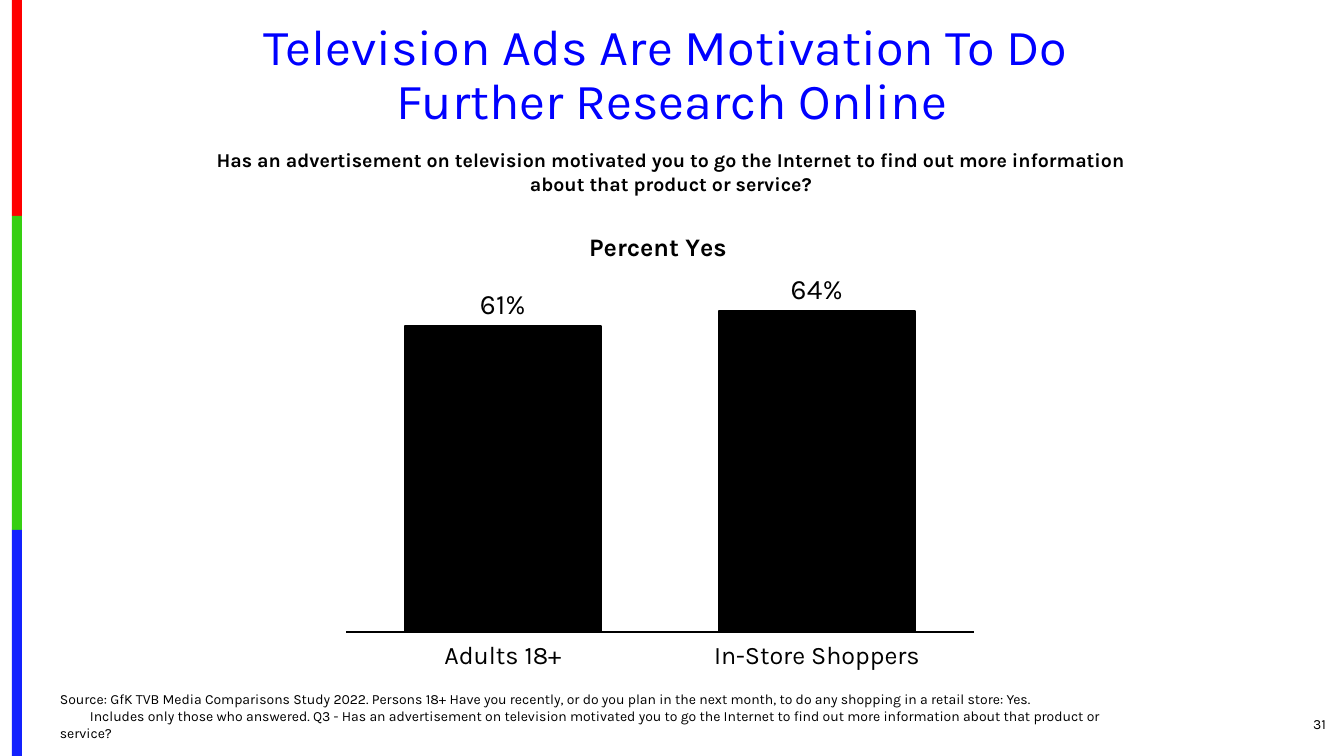
from lxml.etree import SubElement
from pptx import Presentation
from pptx.chart.data import CategoryChartData
from pptx.dml.color import RGBColor
from pptx.enum.chart import XL_CHART_TYPE, XL_LABEL_POSITION, XL_TICK_LABEL_POSITION, XL_TICK_MARK
from pptx.enum.shapes import MSO_SHAPE
from pptx.enum.text import MSO_ANCHOR, PP_ALIGN
from pptx.oxml.ns import qn
from pptx.util import Pt

EMU_PER_PX = 914400 / 100.8


def px(length):
    """Turn whole pixels into EMU."""
    return round(length * EMU_PER_PX)


def color(value):
    """Turn a hex string into a colour."""
    return RGBColor.from_string(value)


def set_layout(part, position, **places):
    """Place a chart part by fractions of the chart area."""
    layout = part.find(qn("c:layout"))
    if layout is None:
        layout = SubElement(part, qn("c:layout"))
        part.insert(position, layout)
    manual = SubElement(layout, qn("c:manualLayout"))
    for name, value in places.items():
        SubElement(manual, qn(f"c:{name}")).set("val", str(value))


class SlideBuilder:
    """Hold the style and the current slide."""

    font_name = "Karla"
    ink = "000000"

    def __init__(self, presentation):
        """Add a blank slide to the presentation."""
        self.slide = presentation.slides.add_slide(presentation.slide_layouts[6])

    def style(self, font, size, bold=False, ink=None):
        """Apply the slide's typeface to a font."""
        font.name = self.font_name
        font.size = Pt(size)
        font.bold = bold
        font.color.rgb = color(ink or self.ink)

    def outline(self, line):
        """Draw a line in the slide's ink."""
        line.color.rgb = color(self.ink)
        line.width = Pt(1.5)

    def band(self, left, top, width, height, fill):
        """Add a plain coloured rectangle."""
        band = self.slide.shapes.add_shape(MSO_SHAPE.RECTANGLE, px(left), px(top), px(width), px(height))
        band.shadow.inherit = False
        band.fill.solid()
        band.fill.fore_color.rgb = color(fill)
        band.line.fill.background()

    def text(self, box, lines, size, align=PP_ALIGN.LEFT, anchor=MSO_ANCHOR.TOP,
             bold=False, ink=None, spacing=None, last_indent=0):
        """Add a wrapped text box with one paragraph per line."""
        frame = self.slide.shapes.add_textbox(*map(px, box)).text_frame
        frame.word_wrap = True
        frame.vertical_anchor = anchor
        frame.text = "\n".join(lines)
        for paragraph in frame.paragraphs:
            paragraph.alignment = align
            paragraph.line_spacing = spacing
            for run in paragraph.runs:
                self.style(run.font, size, bold, ink)
        if last_indent:
            frame.paragraphs[-1]._p.get_or_add_pPr().set("indent", str(px(last_indent)))

    def column_chart(self, box, heading, shares):
        """Add a column chart of shares with a heading."""
        data = CategoryChartData(number_format="0%")
        data.categories = list(shares)
        data.add_series("Series 1", list(shares.values()))
        chart = self.slide.shapes.add_chart(XL_CHART_TYPE.COLUMN_CLUSTERED, *map(px, box), data).chart
        self.style(chart.font, 10)
        chart.has_legend = False

        chart.has_title = True
        title = chart.chart_title
        title.text_frame.text = heading
        self.style(title.text_frame.paragraphs[0].runs[0].font, 18, bold=True)
        set_layout(title._element, 1, xMode="edge", yMode="edge", x=0.38, y=0.04)
        set_layout(chart._chartSpace.chart.plotArea, 0, layoutTarget="inner",
                   xMode="edge", yMode="edge", x=0, y=0.15, w=1, h=0.69)

        categories = chart.category_axis
        categories.major_tick_mark = XL_TICK_MARK.NONE
        categories.tick_label_position = XL_TICK_LABEL_POSITION.LOW
        self.style(categories.tick_labels.font, 18)
        self.outline(categories.format.line)
        percent = chart.value_axis
        percent.minimum_scale = 0
        percent.maximum_scale = 0.7
        percent.has_major_gridlines = False
        percent.visible = False

        plot = chart.plots[0]
        plot.gap_width = 60
        plot.vary_by_categories = False
        columns = plot.series[0]
        columns.format.fill.solid()
        columns.format.fill.fore_color.rgb = color(self.ink)
        self.outline(columns.format.line)
        labels = columns.data_labels
        labels.show_value = True
        labels.number_format = "0%"
        labels.number_format_is_linked = False
        labels.position = XL_LABEL_POSITION.OUTSIDE_END
        self.style(labels.font, 20)


def main():
    """Build and save the slide."""
    presentation = Presentation()
    presentation.slide_width = px(1344)
    presentation.slide_height = px(756)
    builder = SlideBuilder(presentation)

    for top, bottom, fill in ((0, 216, "FE0000"), (216, 530, "36CF12"), (530, 756, "1322FE")):
        builder.band(12, top, 10, bottom - top, fill)

    builder.text((46, 17, 1252, 120),
                 ["Television Ads Are Motivation To Do \vFurther Research Online"],
                 36, PP_ALIGN.CENTER, ink="0000FF", spacing=0.9)
    builder.text((1227, 704, 109, 40), ["31"], 10, PP_ALIGN.RIGHT, MSO_ANCHOR.MIDDLE)
    builder.text((50, 702, 1088, 44),
                 ["Source: GfK TVB Media Comparisons Study 2022. Persons 18+ Have you recently, or do you plan "
                  "in the next month, to do any shopping in a retail store: Yes.",
                  "Includes only those who answered. Q3 - Has an advertisement on television motivated you to go "
                  "the Internet to find out more information about that product or service?"],
                 10, anchor=MSO_ANCHOR.BOTTOM, last_indent=30)
    builder.text((188, 143, 966, 57),
                 ["Has an advertisement on television motivated you to go the Internet to find out more "
                  "information about that product or service?"],
                 14, PP_ALIGN.CENTER, bold=True)
    builder.column_chart((345, 205, 630, 508), "Percent Yes",
                         {"Adults 18+": 0.61, "In-Store Shoppers": 0.64})

    presentation.save("out.pptx")


if __name__ == "__main__":
    main()
